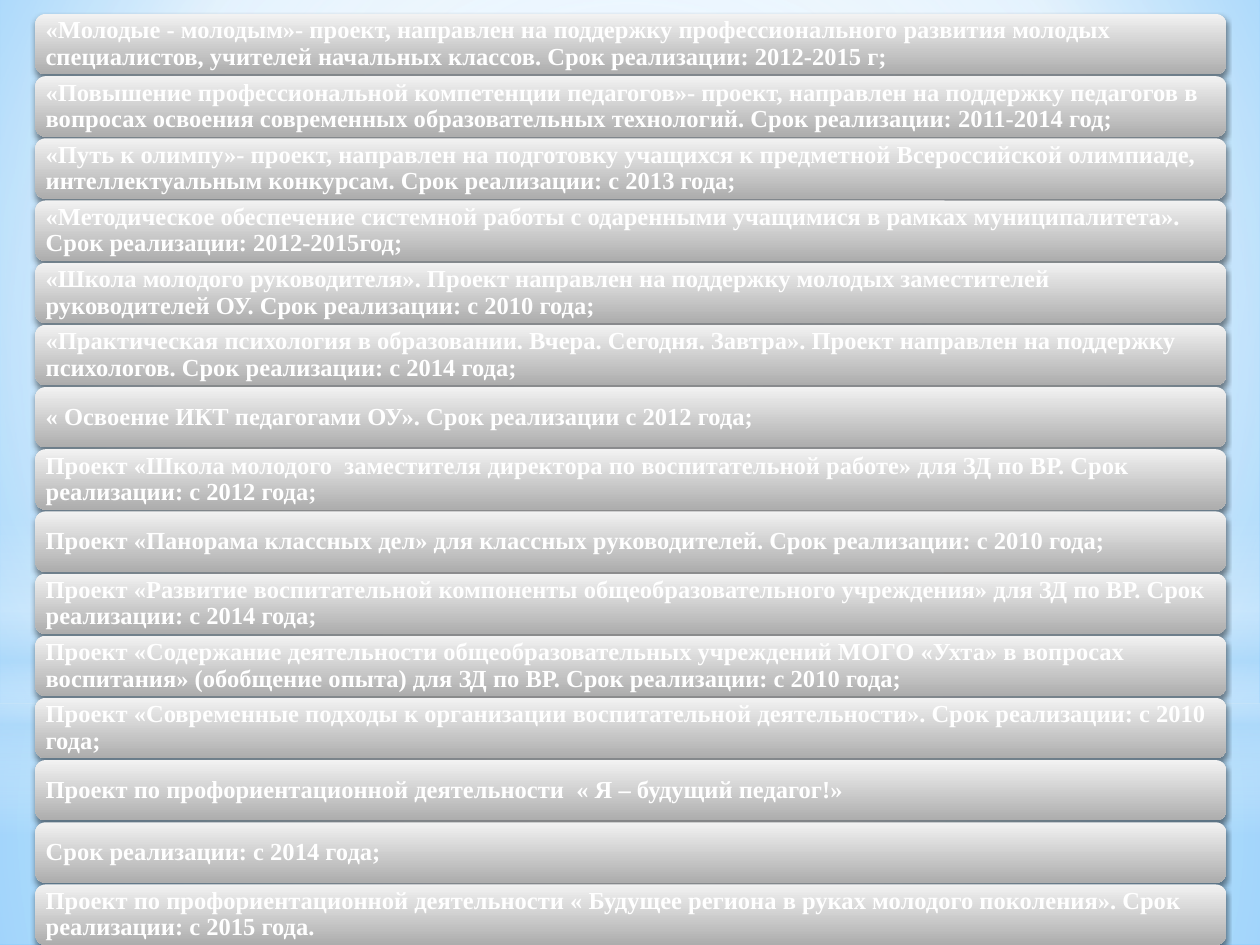
from dataclasses import dataclass

from pptx import Presentation
from pptx.dml.color import RGBColor
from pptx.enum.shapes import MSO_SHAPE as Shape
from pptx.enum.text import MSO_ANCHOR as Anchor, PP_ALIGN as Align
from pptx.oxml import parse_xml
from pptx.oxml.ns import nsdecls, qn
from pptx.util import Pt


@dataclass(frozen=True)
class Theme:
    font: str = "Times New Roman"
    size: float = 14
    text: str = "FFFFFF"
    white: str = "FFFFFF"
    mist: str = "B4DCFA"
    sky: str = "9ED5FF"
    deep_sky: str = "5BB9FF"
    bar_top: str = "F2F2F2"
    bar_bottom: str = "ADADAD"
    shadow: str = "000000"


THEME = Theme()
CENTRE = (50, 50, 50, 50)
WIDTH, HEIGHT = 720, 540
BAR_LEFT, BAR_TOP, BAR_WIDTH, BAR_HEIGHT = 20.2, 8, 680.4, 34.5
BAR_PITCH = 35.53

PROJECTS = [
    "«Молодые - молодым»- проект, направлен на поддержку профессионального развития молодых специалистов, учителей начальных классов. Срок реализации: 2012-2015 г;",
    "«Повышение профессиональной компетенции педагогов»- проект, направлен на поддержку педагогов в вопросах освоения современных образовательных технологий. Срок реализации: 2011-2014 год;",
    "«Путь к олимпу»- проект, направлен на подготовку учащихся к предметной Всероссийской олимпиаде, интеллектуальным конкурсам. Срок реализации: с 2013 года;",
    "«Методическое обеспечение системной работы с одаренными учащимися в рамках муниципалитета». Срок реализации: 2012-2015год;",
    "«Школа молодого руководителя». Проект направлен на поддержку молодых заместителей руководителей ОУ. Срок реализации: с 2010 года;",
    "«Практическая психология в образовании. Вчера. Сегодня. Завтра». Проект направлен на поддержку психологов. Срок реализации: с 2014 года;",
    "« Освоение ИКТ педагогами ОУ». Срок реализации с 2012 года;",
    "Проект «Школа молодого  заместителя директора по воспитательной работе» для ЗД по ВР. Срок реализации: с 2012 года;",
    "Проект «Панорама классных дел» для классных руководителей. Срок реализации: с 2010 года;",
    "Проект «Развитие воспитательной компоненты общеобразовательного учреждения» для ЗД по ВР. Срок реализации: с 2014 года;",
    "Проект «Содержание деятельности общеобразовательных учреждений МОГО «Ухта» в вопросах воспитания» (обобщение опыта) для ЗД по ВР. Срок реализации: с 2010 года;",
    "Проект «Современные подходы к организации воспитательной деятельности». Срок реализации: с 2010 года;",
    "Проект по профориентационной деятельности  « Я – будущий педагог!»",
    "Срок реализации: с 2014 года;",
    "Проект по профориентационной деятельности « Будущее региона в руках молодого поколения». Срок реализации: с 2015 года.",
]


def set_gradient(fill, parent, stops, focus=None):
    fill.solid()
    fill.fore_color.rgb = RGBColor.from_string(THEME.white)
    gs = "".join(
        f'<a:gs pos="{pos * 1000}"><a:srgbClr val="{color}">'
        f'<a:alpha val="{alpha * 1000}"/></a:srgbClr></a:gs>'
        for pos, color, alpha in stops
    )
    if focus:
        l, t, r, b = (side * 1000 for side in focus)
        kind = (f'<a:path path="circle"><a:fillToRect l="{l}" t="{t}" '
                f'r="{r}" b="{b}"/></a:path>')
    else:
        kind = '<a:lin ang="5400000" scaled="0"/>'
    gradient = parse_xml(
        f'<a:gradFill {nsdecls("a")} rotWithShape="1">'
        f'<a:gsLst>{gs}</a:gsLst>{kind}</a:gradFill>'
    )
    parent.replace(parent.find(qn("a:solidFill")), gradient)


def add_gradient_shape(slide, kind, box, stops, focus=None):
    sp = slide.shapes.add_shape(kind, *(Pt(v) for v in box))
    sp.shadow.inherit = False
    sp.line.fill.background()
    set_gradient(sp.fill, sp._element.spPr, stops, focus)
    return sp


def add_shadow(sp):
    effects = sp._element.spPr.find(qn("a:effectLst"))
    effects.append(parse_xml(
        f'<a:outerShdw {nsdecls("a")} blurRad="{Pt(3.1)}" dist="{Pt(1.8)}" '
        f'dir="5400000" rotWithShape="0"><a:srgbClr val="{THEME.shadow}">'
        '<a:alpha val="45000"/></a:srgbClr></a:outerShdw>'
    ))


def add_backdrop(slide):
    white, mist = THEME.white, THEME.mist
    set_gradient(
        slide.background.fill, slide.element.xpath(".//p:bgPr")[0],
        [(0, THEME.sky, 100), (60, white, 100), (100, THEME.deep_sky, 100)],
        (20, 10, 20, 60),
    )
    horizon = 401.8
    add_gradient_shape(slide, Shape.RECTANGLE, (0, horizon, WIDTH, HEIGHT - horizon),
                       [(0, white, 91), (37, white, 76), (100, mist, 79)], CENTRE)
    add_gradient_shape(slide, Shape.RECTANGLE, (0, 0, WIDTH, horizon),
                       [(0, white, 89), (48, white, 62), (100, mist, 79)], CENTRE)
    add_gradient_shape(slide, Shape.RECTANGLE, (0, 296.6, WIDTH, 180),
                       [(0, white, 0), (29, white, 30), (45, mist, 40),
                        (55, white, 26), (65, mist, 60), (100, white, 0)])
    add_gradient_shape(slide, Shape.OVAL, (0, 126, WIDTH, horizon),
                       [(0, white, 100), (56, white, 0)], CENTRE)


def add_project_bar(slide, top, text):
    sp = add_gradient_shape(
        slide, Shape.ROUNDED_RECTANGLE, (BAR_LEFT, top, BAR_WIDTH, BAR_HEIGHT),
        [(0, THEME.bar_top, 100), (100, THEME.bar_bottom, 100)],
    )
    add_shadow(sp)
    tf = sp.text_frame
    tf.word_wrap = True
    tf.vertical_anchor = Anchor.MIDDLE
    tf.margin_left = tf.margin_right = tf.margin_top = tf.margin_bottom = Pt(4.2)
    tf.text = text
    p = tf.paragraphs[0]
    p.alignment = Align.LEFT
    p.line_spacing = 0.9
    font = p.runs[0].font
    font.name = THEME.font
    font.size = Pt(THEME.size)
    font.bold = True
    font.color.rgb = RGBColor.from_string(THEME.text)


def main():
    prs = Presentation()
    prs.slide_width, prs.slide_height = Pt(WIDTH), Pt(HEIGHT)
    slide = prs.slides.add_slide(prs.slide_layouts[6])
    add_backdrop(slide)
    for i, project in enumerate(PROJECTS):
        add_project_bar(slide, BAR_TOP + i * BAR_PITCH, project)
    prs.save("out.pptx")


if __name__ == "__main__":
    main()
